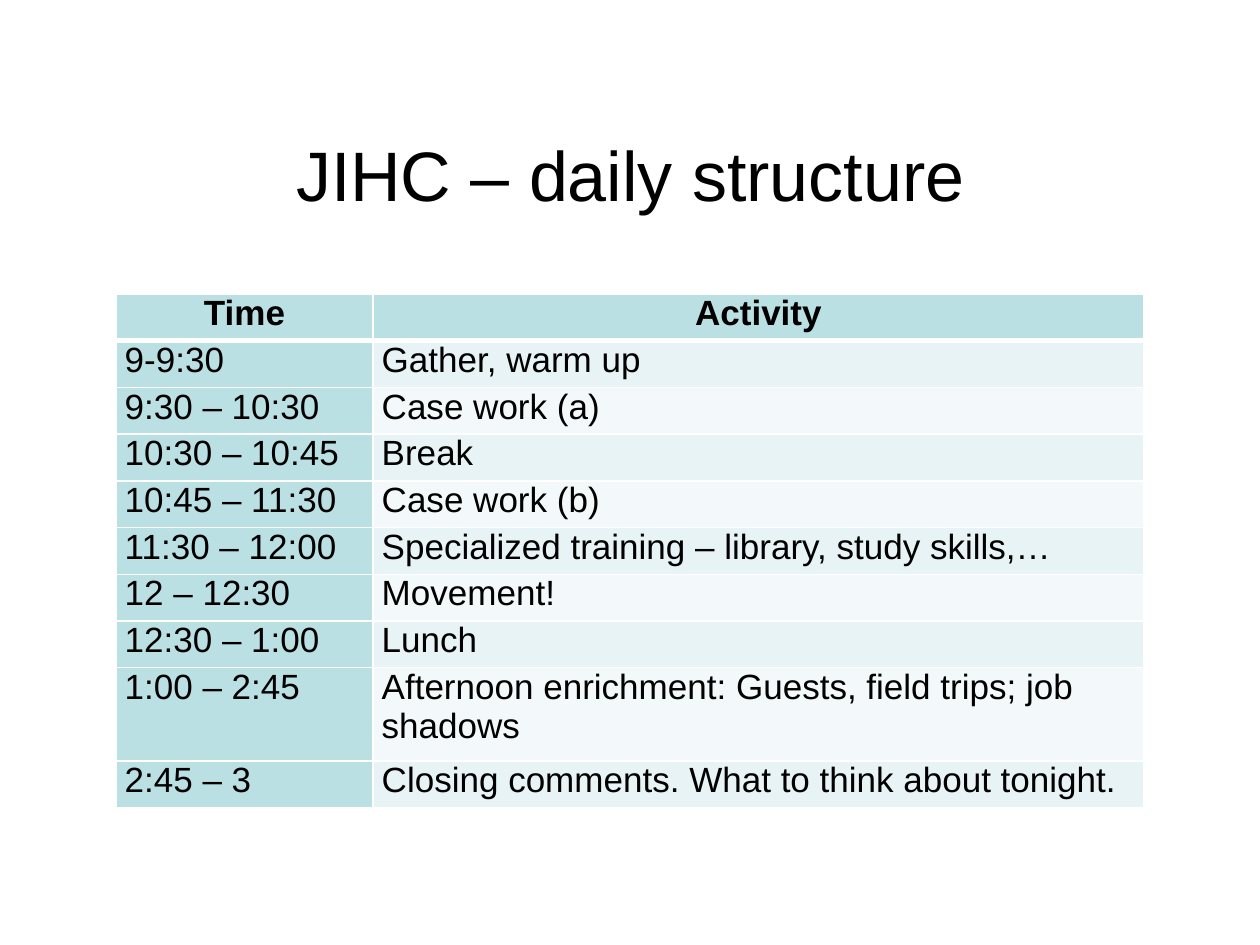
from dataclasses import dataclass

from lxml import etree
from pptx import Presentation
from pptx.dml.color import RGBColor
from pptx.enum import text as tx
from pptx.oxml import ns
from pptx.util import Emu, Inches, Pt

BLACK = RGBColor(0x00, 0x00, 0x00)
WHITE = RGBColor(0xFF, 0xFF, 0xFF)
TEAL = RGBColor(0xBB, 0xE0, 0xE3)
PALE = RGBColor(0xE7, 0xF3, 0xF4)
FAINT = RGBColor(0xF3, 0xF9, 0xFA)

WIDE, HIGH = Inches(10), Inches(7.5)
UNIT = Inches(4.08 / 11)
COLS = (0.204, 0.612)


@dataclass(frozen=True)
class Slot:
    time: str
    task: str
    units: int = 1


SLOTS = (
    Slot("Time", "Activity"),
    Slot("9-9:30", "Gather, warm up"),
    Slot("9:30 – 10:30", "Case work (a)"),
    Slot("10:30 – 10:45", "Break"),
    Slot("10:45 – 11:30", "Case work (b)"),
    Slot("11:30 – 12:00", "Specialized training – library, study skills,…"),
    Slot("12 – 12:30", "Movement!"),
    Slot("12:30 – 1:00", "Lunch"),
    Slot("1:00 – 2:45", "Afternoon enrichment: Guests, field trips; job shadows", 2),
    Slot("2:45 – 3", "Closing comments. What to think about tonight."),
)


def across(share: float) -> Emu:
    return Emu(round(WIDE * share))


def down(share: float) -> Emu:
    return Emu(round(HIGH * share))


def write(frame, words: str, *, size: int = 20, bold: bool = False,
          align=tx.PP_ALIGN.LEFT) -> None:
    para = frame.paragraphs[0]
    para.alignment = align
    run = para.add_run()
    run.text = words
    run.font.name = "Arial"
    run.font.size = Pt(size)
    run.font.bold = bold
    run.font.color.rgb = BLACK


def edge(cell, side: str, width: int) -> None:
    props = cell._tc.get_or_add_tcPr()
    line = etree.SubElement(props, ns.qn(f"a:ln{side}"), w=str(Pt(width)))
    fill = etree.SubElement(line, ns.qn("a:solidFill"))
    etree.SubElement(fill, ns.qn("a:srgbClr"), val=str(WHITE))


def draw_cell(cell, words: str, row: int, col: int) -> None:
    head = row == 0
    cell.margin_left = cell.margin_right = Inches(0.07)
    cell.margin_top = cell.margin_bottom = 0
    for side in "LRTB":
        thick = (side, row) in (("B", 0), ("T", 1))
        edge(cell, side, 3 if thick else 1)
    cell.fill.solid()
    band = PALE if row % 2 else FAINT
    cell.fill.fore_color.rgb = TEAL if head or col == 0 else band
    write(cell.text_frame, words, bold=head,
          align=tx.PP_ALIGN.CENTER if head else tx.PP_ALIGN.LEFT)


def draw_title(slide, words: str) -> None:
    box = slide.shapes.add_textbox(across(0.075), down(0.1),
                                   across(0.866), down(1 / 6))
    frame = box.text_frame
    frame.word_wrap = True
    frame.vertical_anchor = tx.MSO_ANCHOR.MIDDLE
    write(frame, words, size=40, align=tx.PP_ALIGN.CENTER)


def draw_plan(slide, slots: tuple[Slot, ...]) -> None:
    tall = UNIT * sum(slot.units for slot in slots)
    table = slide.shapes.add_table(len(slots), len(COLS), across(0.092),
                                   down(0.311), across(sum(COLS)), tall).table
    for col, share in zip(table.columns, COLS):
        col.width = across(share)
    for row, slot in enumerate(slots):
        table.rows[row].height = UNIT * slot.units
        for col, words in enumerate((slot.time, slot.task)):
            draw_cell(table.cell(row, col), words, row, col)


def main() -> None:
    deck = Presentation()
    deck.slide_width, deck.slide_height = WIDE, HIGH
    slide = deck.slides.add_slide(deck.slide_layouts[6])
    draw_title(slide, "JIHC – daily structure ")
    draw_plan(slide, SLOTS)
    deck.save("out.pptx")


if __name__ == "__main__":
    main()
